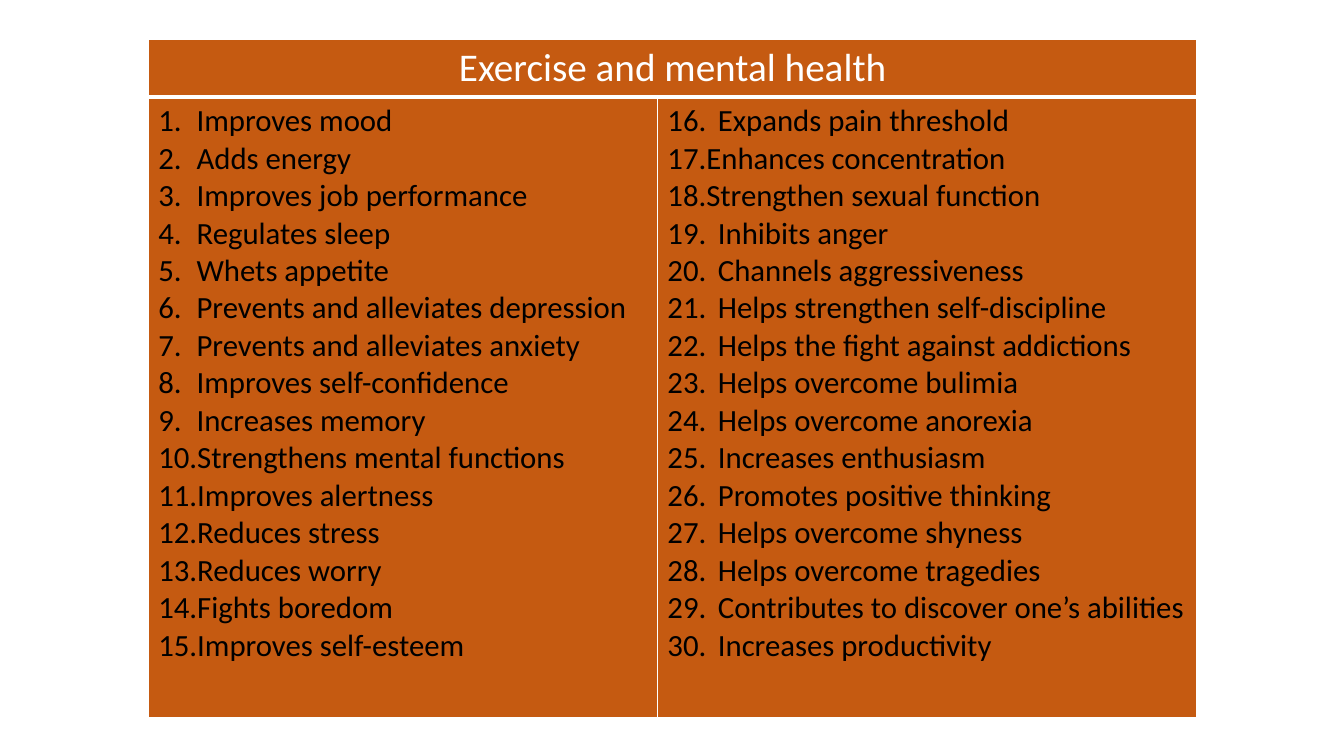
from lxml.etree import SubElement
from pptx import Presentation
from pptx.dml.color import RGBColor
from pptx.enum.text import MSO_ANCHOR, PP_ALIGN
from pptx.oxml.ns import qn
from pptx.util import Inches, Pt

TITLE = "Exercise and mental health"
LEFT_BENEFITS = [
    "Improves mood", "Adds energy", "Improves job performance",
    "Regulates sleep", "Whets appetite",
    "Prevents and alleviates depression", "Prevents and alleviates anxiety",
    "Improves self-confidence", "Increases memory",
    "Strengthens mental functions", "Improves alertness", "Reduces stress",
    "Reduces worry", "Fights boredom", "Improves self-esteem",
]
RIGHT_BENEFITS = [
    "Expands pain threshold", "Enhances concentration",
    "Strengthen sexual function", "Inhibits anger",
    "Channels aggressiveness", "Helps strengthen self-discipline",
    "Helps the fight against addictions", "Helps overcome bulimia",
    "Helps overcome anorexia", "Increases enthusiasm",
    "Promotes positive thinking", "Helps overcome shyness",
    "Helps overcome tragedies", "Contributes to discover one’s abilities",
    "Increases productivity",
]
NARROW_INDENT = 0.38
WIDE_INDENT = 0.5
TIGHT_ITEMS = {"Enhances concentration", "Strengthen sexual function"}


def color(value):
    return RGBColor.from_string(value)


class SlideBuilder:
    font = "Calibri"
    fill = "C55A11"
    line = "FFFFFF"

    def __init__(self, slide):
        self.s = slide

    def table(self, left, top, widths, heights):
        frame = self.s.shapes.add_table(
            len(heights), len(widths), Inches(left), Inches(top),
            Inches(sum(widths)), Inches(sum(heights)))
        tbl = frame.table
        tbl.first_row = tbl.horz_banding = False
        for column, width in zip(tbl.columns, widths):
            column.width = Inches(width)
        for row, height in zip(tbl.rows, heights):
            row.height = Inches(height)
        return tbl

    def cell(self, cell, bottom=1):
        tcPr = cell._tc.get_or_add_tcPr()
        for side, width in {"L": 1, "R": 1, "T": 1, "B": bottom}.items():
            ln = SubElement(tcPr, qn(f"a:ln{side}"), w=str(Pt(width)))
            solid = SubElement(ln, qn("a:solidFill"))
            SubElement(solid, qn("a:srgbClr"), val=self.line)
        cell.fill.solid()
        cell.fill.fore_color.rgb = color(self.fill)
        cell.vertical_anchor = MSO_ANCHOR.TOP

    def text(self, p, text, size, rgb):
        r = p.add_run()
        r.text = text
        for name, value in {"name": self.font, "size": Pt(size), "bold": False}.items():
            setattr(r.font, name, value)
        r.font.color.rgb = color(rgb)

    def numbered_list(self, cell, items, start, indents):
        tf = cell.text_frame
        for i, (item, indent) in enumerate(zip(items, indents)):
            p = tf.add_paragraph() if i else tf.paragraphs[0]
            pPr = p._p.get_or_add_pPr()
            pPr.set("marL", str(Inches(indent)))
            pPr.set("indent", str(-Inches(indent)))
            SubElement(pPr, qn("a:buFont"), typeface="+mj-lt")
            SubElement(pPr, qn("a:buAutoNum"), type="arabicPeriod", startAt=str(start))
            self.text(p, item, 22, "000000")


def main():
    prs = Presentation()
    prs.slide_width = Inches(13.33)
    prs.slide_height = Inches(7.5)
    builder = SlideBuilder(prs.slides.add_slide(prs.slide_layouts[6]))

    tbl = builder.table(1.47, 0.39, [5.05, 5.35], [0.54, 6.15])
    for column in range(2):
        builder.cell(tbl.cell(0, column), bottom=3)
        builder.cell(tbl.cell(1, column))

    header = tbl.cell(0, 0)
    header.merge(tbl.cell(0, 1))
    p = header.text_frame.paragraphs[0]
    p.alignment = PP_ALIGN.CENTER
    builder.text(p, TITLE, 28, "FFFFFF")

    builder.numbered_list(tbl.cell(1, 0), LEFT_BENEFITS, 1,
                          [NARROW_INDENT] * len(LEFT_BENEFITS))
    builder.numbered_list(tbl.cell(1, 1), RIGHT_BENEFITS, len(LEFT_BENEFITS) + 1,
                          [NARROW_INDENT if item in TIGHT_ITEMS else WIDE_INDENT
                           for item in RIGHT_BENEFITS])
    prs.save("out.pptx")


if __name__ == "__main__":
    main()
